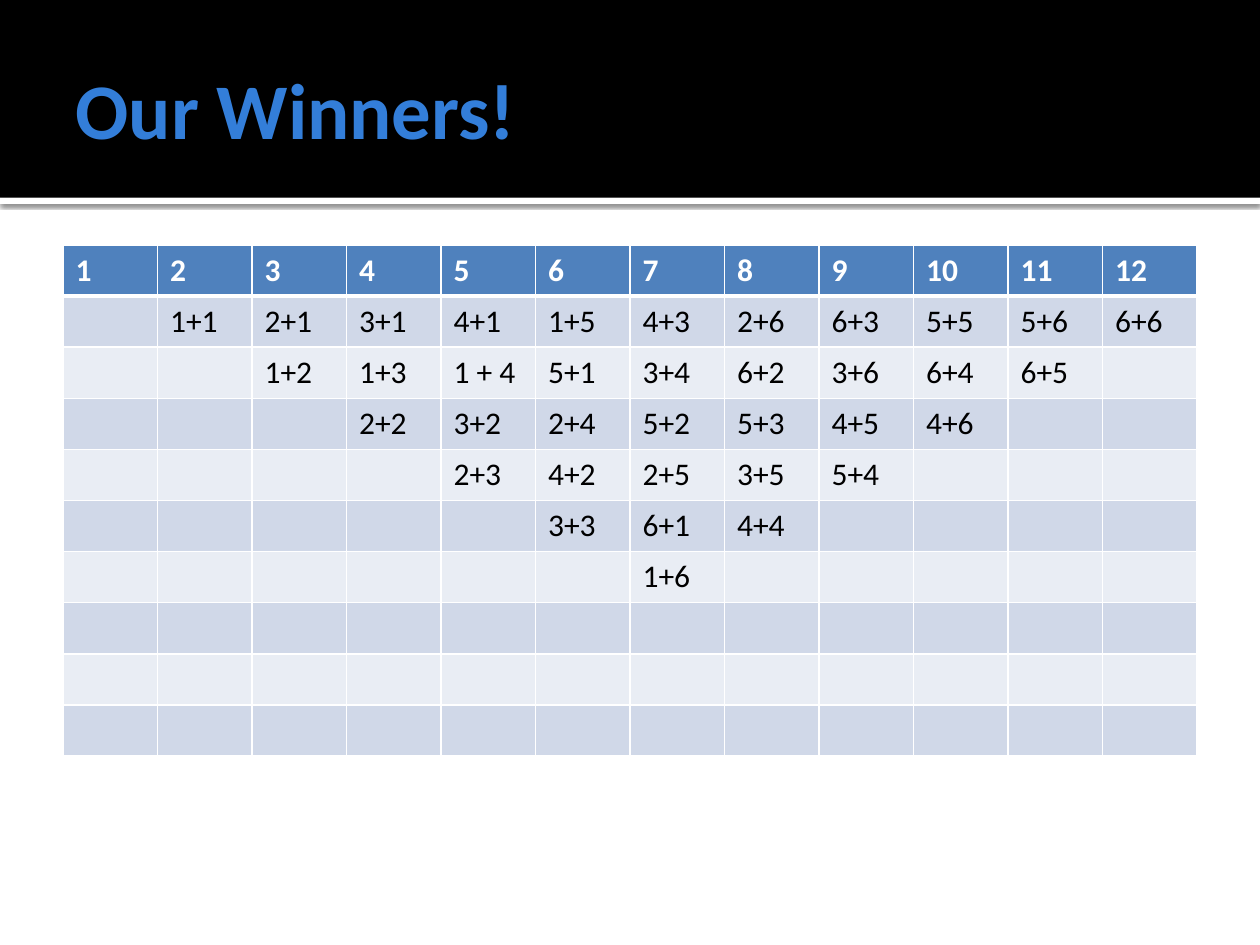
from dataclasses import dataclass

import lxml.etree
import pptx
import pptx.dml.color
import pptx.enum.shapes
import pptx.enum.text
import pptx.oxml
import pptx.oxml.ns
import pptx.util

Pt = pptx.util.Pt
RGBColor = pptx.dml.color.RGBColor

WHITE = RGBColor(0xFF, 0xFF, 0xFF)
BLACK = RGBColor(0x00, 0x00, 0x00)
TITLE_BLUE = RGBColor(0x33, 0x7E, 0xD9)
HEADER_BLUE = RGBColor(0x4F, 0x81, 0xBD)
DARK_STRIPE = RGBColor(0xD0, 0xD8, 0xE8)
LIGHT_STRIPE = RGBColor(0xE9, 0xED, 0xF4)

FONT = "Calibri"
ROW_COUNT = 10
COLUMN_WIDTH = 54
ROW_HEIGHT = 29.2
THIN_BORDER = 1
THICK_BORDER = 3

ROLLS_BY_TOTAL = {
    1: [],
    2: ["1+1"],
    3: ["2+1", "1+2"],
    4: ["3+1", "1+3", "2+2"],
    5: ["4+1", "1 + 4", "3+2", "2+3"],
    6: ["1+5", "5+1", "2+4", "4+2", "3+3"],
    7: ["4+3", "3+4", "5+2", "2+5", "6+1", "1+6"],
    8: ["2+6", "6+2", "5+3", "3+5", "4+4"],
    9: ["6+3", "3+6", "4+5", "5+4"],
    10: ["5+5", "6+4", "4+6"],
    11: ["5+6", "6+5"],
    12: ["6+6"],
}


@dataclass(frozen=True)
class Band:
    top: float
    height: float
    color: RGBColor
    shadowed: bool


BANDS = [
    Band(top=113, height=3.6, color=WHITE, shadowed=True),
    Band(top=0, height=113, color=BLACK, shadowed=False),
]


def write_text(text_frame, text: str, *, size: float, color: RGBColor, bold: bool = False) -> None:
    paragraph = text_frame.paragraphs[0]
    run = paragraph.add_run()
    run.text = text
    run.font.name = FONT
    run.font.size = Pt(size)
    run.font.bold = bold
    run.font.color.rgb = color


def add_shadow(shape) -> None:
    effects = shape.element.spPr.find(pptx.oxml.ns.qn("a:effectLst"))
    effects.append(pptx.oxml.parse_xml(
        f'<a:outerShdw {pptx.oxml.ns.nsdecls("a")} blurRad="{Pt(2.5)}" dist="{Pt(0.8)}" '
        'dir="5400000" algn="tl" rotWithShape="0">'
        '<a:srgbClr val="000000"><a:alpha val="60000"/></a:srgbClr></a:outerShdw>'
    ))


def draw_band(slide, band: Band) -> None:
    shape = slide.shapes.add_shape(
        pptx.enum.shapes.MSO_SHAPE.RECTANGLE, 0, Pt(band.top), Pt(720), Pt(band.height)
    )
    shape.shadow.inherit = False
    shape.fill.solid()
    shape.fill.fore_color.rgb = band.color
    shape.line.fill.background()
    if band.shadowed:
        add_shadow(shape)


def draw_title(slide) -> None:
    title = slide.shapes.title
    title.left, title.top, title.width, title.height = Pt(36), Pt(12.2), Pt(648), Pt(98.6)
    title.element.getparent().append(title.element)
    text_frame = title.text_frame
    text_frame.vertical_anchor = pptx.enum.text.MSO_ANCHOR.MIDDLE
    text_frame.margin_left = Pt(7.2)
    text_frame.margin_top = text_frame.margin_right = text_frame.margin_bottom = Pt(3.6)
    text_frame.paragraphs[0].alignment = pptx.enum.text.PP_ALIGN.LEFT
    write_text(text_frame, "Our Winners!", size=45, color=TITLE_BLUE, bold=True)


def set_borders(cell, top: float, bottom: float) -> None:
    properties = cell._tc.get_or_add_tcPr()
    widths = {"lnL": THIN_BORDER, "lnR": THIN_BORDER, "lnT": top, "lnB": bottom}
    for position, (side, width) in enumerate(widths.items()):
        line = lxml.etree.Element(pptx.oxml.ns.qn(f"a:{side}"), w=str(Pt(width)))
        fill = lxml.etree.SubElement(line, pptx.oxml.ns.qn("a:solidFill"))
        lxml.etree.SubElement(fill, pptx.oxml.ns.qn("a:srgbClr"), val=str(WHITE))
        properties.insert(position, line)


def format_cell(cell, row: int, text: str) -> None:
    is_header = row == 0
    cell.fill.solid()
    stripe = DARK_STRIPE if row % 2 else LIGHT_STRIPE
    cell.fill.fore_color.rgb = HEADER_BLUE if is_header else stripe
    set_borders(
        cell,
        top=THICK_BORDER if row == 1 else THIN_BORDER,
        bottom=THICK_BORDER if is_header else THIN_BORDER,
    )
    if text:
        write_text(cell.text_frame, text, size=18, color=WHITE if is_header else BLACK, bold=is_header)


def draw_table(slide) -> None:
    column_count = len(ROLLS_BY_TOTAL)
    table = slide.shapes.add_table(
        ROW_COUNT, column_count, Pt(36), Pt(140),
        Pt(COLUMN_WIDTH * column_count), Pt(ROW_HEIGHT * ROW_COUNT),
    ).table
    for table_row in table.rows:
        table_row.height = Pt(ROW_HEIGHT)
    for column, (total, rolls) in enumerate(ROLLS_BY_TOTAL.items()):
        table.columns[column].width = Pt(COLUMN_WIDTH)
        texts = [str(total), *rolls]
        for row in range(ROW_COUNT):
            text = texts[row] if row < len(texts) else ""
            format_cell(table.cell(row, column), row, text)


def main() -> None:
    presentation = pptx.Presentation()
    presentation.slide_width = Pt(720)
    presentation.slide_height = Pt(540)
    slide = presentation.slides.add_slide(presentation.slide_layouts[5])
    for band in BANDS:
        draw_band(slide, band)
    draw_title(slide)
    draw_table(slide)
    presentation.save("out.pptx")


if __name__ == "__main__":
    main()
